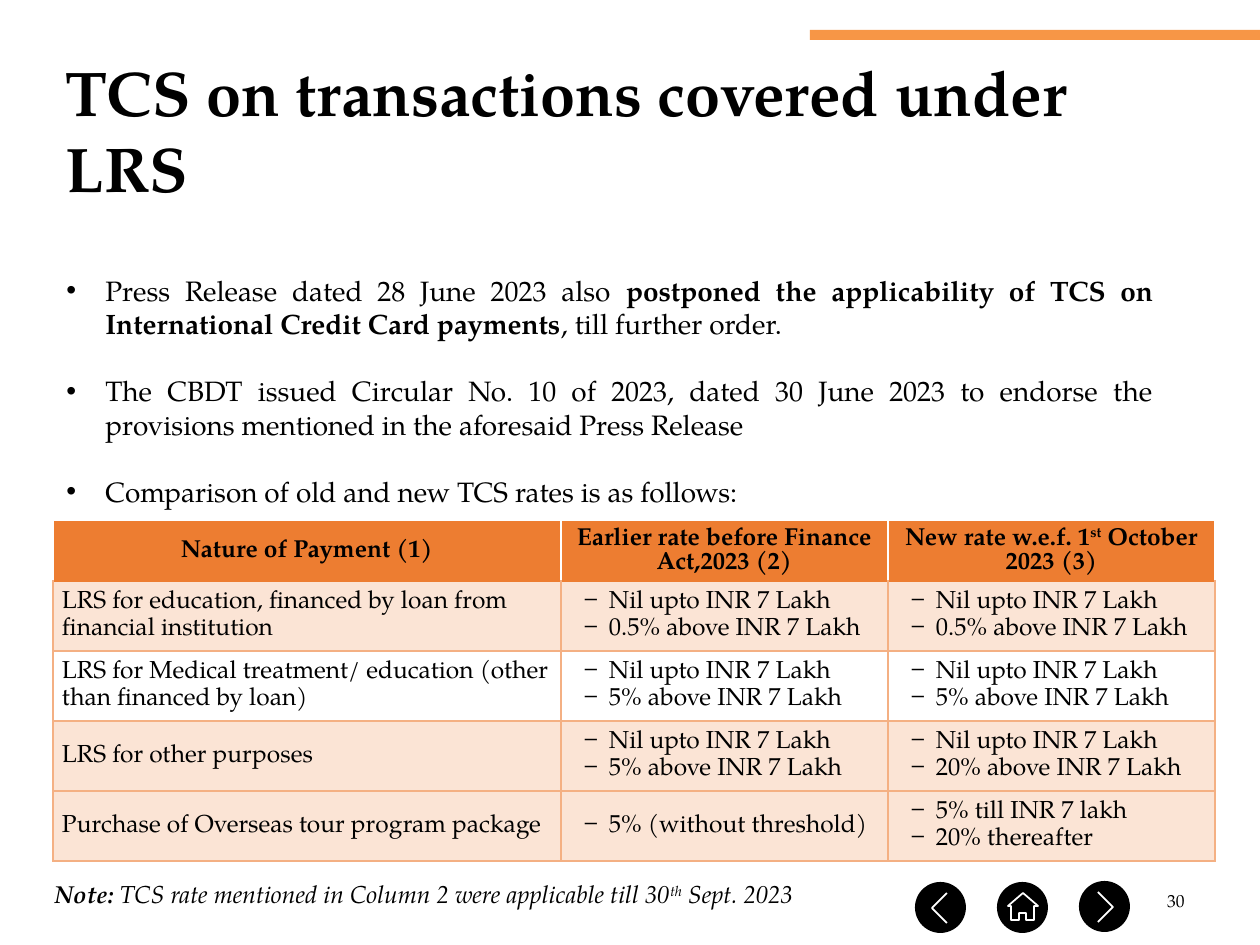
from dataclasses import dataclass
from typing import Optional, Sequence

from lxml.etree import SubElement
from pptx import Presentation
from pptx.dml.color import RGBColor
from pptx.enum.shapes import MSO_SHAPE as Preset
from pptx.enum.text import MSO_ANCHOR as Anchor
from pptx.enum.text import MSO_AUTO_SIZE as AutoSize
from pptx.enum.text import PP_ALIGN as Align
from pptx.oxml.ns import qn
from pptx.util import Pt

SCALE = 914400 / 126


@dataclass(frozen=True)
class Theme:
    font: str = "TeX Gyre Pagella"
    ink: str = "000000"
    paper: str = "FFFFFF"
    accent: str = "F79646"
    header: str = "ED7D31"
    band: str = "FBE4D5"
    rule: str = "F4B083"
    title: int = 36
    body: int = 16
    small: int = 14
    page: int = 10


THEME = Theme()


@dataclass(frozen=True)
class Span:
    text: str
    bold: bool = False
    italic: bool = False
    raised: bool = False


@dataclass(frozen=True)
class Box:
    left: int
    top: int
    width: int
    height: int

    def emu(self) -> list[int]:
        return [px(n) for n in (self.left, self.top, self.width, self.height)]


@dataclass(frozen=True)
class Rate:
    nature: str
    earlier: Sequence[str]
    new: Sequence[str]
    fill: Optional[str] = THEME.band


@dataclass(frozen=True)
class Button:
    box: Box
    icon: Sequence[tuple[int, int]]
    closed: bool = False


def px(length: float) -> int:
    return round(length * SCALE)


def rgb(color: str) -> RGBColor:
    return RGBColor.from_string(color)


def write(paragraph, spans: Sequence[Span], size: int) -> None:
    for span in spans:
        run = paragraph.add_run()
        run.text = span.text
        font = run.font
        font.name, font.size = THEME.font, Pt(size)
        font.bold, font.italic = span.bold, span.italic
        font.color.rgb = rgb(THEME.ink)
        if span.raised:
            font._element.set("baseline", "30000")


def bullet(paragraph, mark: str, margin: int, hang: int, face: str) -> None:
    props = paragraph._p.get_or_add_pPr()
    props.set("marL", str(px(margin)))
    props.set("indent", str(px(-hang)))
    SubElement(props, qn("a:buFont"), typeface=face)
    SubElement(props, qn("a:buChar"), char=mark)


def add_text(slide, box: Box):
    frame = slide.shapes.add_textbox(*box.emu()).text_frame
    frame.word_wrap = True
    return frame


def add_filled(slide, preset, box: Box, color: str) -> None:
    shape = slide.shapes.add_shape(preset, *box.emu())
    shape.shadow.inherit = False
    shape.fill.solid()
    shape.fill.fore_color.rgb = rgb(color)
    shape.line.fill.background()


def add_button(slide, button: Button) -> None:
    add_filled(slide, Preset.OVAL, button.box, THEME.ink)
    start, *rest = button.icon
    builder = slide.shapes.build_freeform(*start, scale=SCALE)
    builder.add_line_segments(rest, close=button.closed)
    icon = builder.convert_to_shape()
    icon.shadow.inherit = False
    icon.fill.background()
    icon.line.color.rgb = rgb(THEME.paper)
    icon.line.width = Pt(1)


def style_cell(cell, fill: Optional[str], edges: dict[str, str]) -> None:
    cell.vertical_anchor = Anchor.MIDDLE
    cell.margin_left = cell.margin_right = px(9)
    cell.margin_top = cell.margin_bottom = 0
    props = cell._tc.get_or_add_tcPr()
    for side, color in edges.items():
        line = SubElement(props, qn(f"a:ln{side}"), w=str(Pt(1)))
        SubElement(SubElement(line, qn("a:solidFill")), qn("a:srgbClr"), val=color)
    if fill:
        cell.fill.solid()
        cell.fill.fore_color.rgb = rgb(fill)
    else:
        cell.fill.background()


def add_rates(slide, box: Box, widths: Sequence[int], heights: Sequence[int],
              headings: Sequence[Sequence[Span]], rates: Sequence[Rate]) -> None:
    table = slide.shapes.add_table(len(heights), len(widths), *box.emu()).table
    table.first_row = table.horz_banding = False
    for column, width in zip(table.columns, widths):
        column.width = px(width)
    for row, height in zip(table.rows, heights):
        row.height = px(height)
    for column, heading in enumerate(headings):
        cell = table.cell(0, column)
        style_cell(cell, THEME.header, {"T": THEME.header, "B": THEME.header})
        paragraph = cell.text_frame.paragraphs[0]
        paragraph.alignment = Align.CENTER
        write(paragraph, heading, THEME.small)
    for row, rate in enumerate(rates, 1):
        top = THEME.header if row == 1 else THEME.rule
        edges = {"L": THEME.rule, "R": THEME.rule, "T": top, "B": THEME.rule}
        for column, lines in enumerate(([rate.nature], rate.earlier, rate.new)):
            cell = table.cell(row, column)
            style_cell(cell, rate.fill, edges)
            frame = cell.text_frame
            for index, line in enumerate(lines):
                paragraph = frame.add_paragraph() if index else frame.paragraphs[0]
                paragraph.line_spacing = 1.07
                if column:
                    bullet(paragraph, "‒", 39, 26, THEME.font)
                else:
                    paragraph.space_after = Pt(8)
                write(paragraph, [Span(line)], THEME.small)


POINTS = [
    [Span("Press Release dated 28 June 2023 also "),
     Span("postponed the applicability of TCS on International Credit Card payments", bold=True),
     Span(", till further order.")],
    [Span("The CBDT issued Circular No. 10 of 2023, dated 30 June 2023 to endorse the "
          "provisions mentioned in the aforesaid Press Release")],
    [Span("Comparison of old and new TCS rates is as follows:")],
]
HEADINGS = [
    [Span("Nature of Payment (1)", bold=True)],
    [Span("Earlier rate before Finance Act,2023 (2)", bold=True)],
    [Span("New rate w.e.f. 1", bold=True), Span("st", bold=True, raised=True),
     Span(" October 2023 (3)", bold=True)],
]
NIL, FIVE = "Nil upto INR 7 Lakh", "5% above INR 7 Lakh"
RATES = [
    Rate("LRS for education, financed by loan from financial institution",
         [NIL, "0.5% above INR 7 Lakh"], [NIL, "0.5% above INR 7 Lakh"]),
    Rate("LRS for Medical treatment/ education (other than financed by loan)",
         [NIL, FIVE], [NIL, FIVE], None),
    Rate("LRS for other purposes", [NIL, FIVE], [NIL, "20% above INR 7 Lakh"]),
    Rate("Purchase of Overseas tour program package",
         ["5% (without threshold)"], ["5% till INR 7 lakh", "20% thereafter"]),
]
NOTE = [Span("Note: ", bold=True, italic=True),
        Span("TCS rate mentioned in Column 2 were applicable till 30", italic=True),
        Span("th", italic=True, raised=True), Span(" Sept. 2023", italic=True)]
HOME = [(1008, 906), (1023, 893), (1038, 906), (1034, 906), (1034, 920), (1026, 920),
        (1026, 913), (1019, 913), (1019, 920), (1011, 920), (1011, 906)]
BUTTONS = [
    Button(Box(997, 882, 51, 51), HOME, closed=True),
    Button(Box(1079, 881, 51, 51), [(1098, 892), (1113, 907), (1098, 922)]),
    Button(Box(915, 882, 51, 51), [(947, 893), (932, 908), (947, 923)]),
]


def main() -> None:
    deck = Presentation()
    deck.slide_width, deck.slide_height = px(1260), px(945)
    slide = deck.slides.add_slide(deck.slide_layouts[5])

    title = slide.shapes.title
    title.left, title.top, title.width, title.height = Box(53, 42, 1121, 175).emu()
    title.text_frame.auto_size = AutoSize.NONE
    title.text_frame.vertical_anchor = Anchor.MIDDLE
    heading = title.text_frame.paragraphs[0]
    heading.alignment = Align.LEFT
    write(heading, [Span("TCS on transactions covered under LRS", bold=True)], THEME.title)

    add_filled(slide, Preset.RECTANGLE, Box(810, 30, 451, 10), THEME.accent)

    page = add_text(slide, Box(903, 876, 294, 50))
    page.vertical_anchor = Anchor.MIDDLE
    page.paragraphs[0].alignment = Align.RIGHT
    write(page.paragraphs[0], [Span("30")], THEME.page)

    points = add_text(slide, Box(53, 267, 1113, 317))
    points.auto_size = AutoSize.SHAPE_TO_FIT_TEXT
    for index, spans in enumerate(POINTS):
        point = points.add_paragraph() if index else points.paragraphs[0]
        point.alignment = Align.JUSTIFY
        point.space_before = Pt(19.2 if index else 0)
        bullet(point, "•", 40, 39, "Arial")
        write(point, spans, THEME.body)

    for button in BUTTONS:
        add_button(slide, button)
    add_rates(slide, Box(53, 522, 1163, 339), [508, 327, 327], [55] + [70] * 4,
              HEADINGS, RATES)

    note = add_text(slide, Box(42, 873, 862, 43))
    note.auto_size = AutoSize.SHAPE_TO_FIT_TEXT
    write(note.paragraphs[0], NOTE, THEME.small)
    deck.save("out.pptx")


if __name__ == "__main__":
    main()
